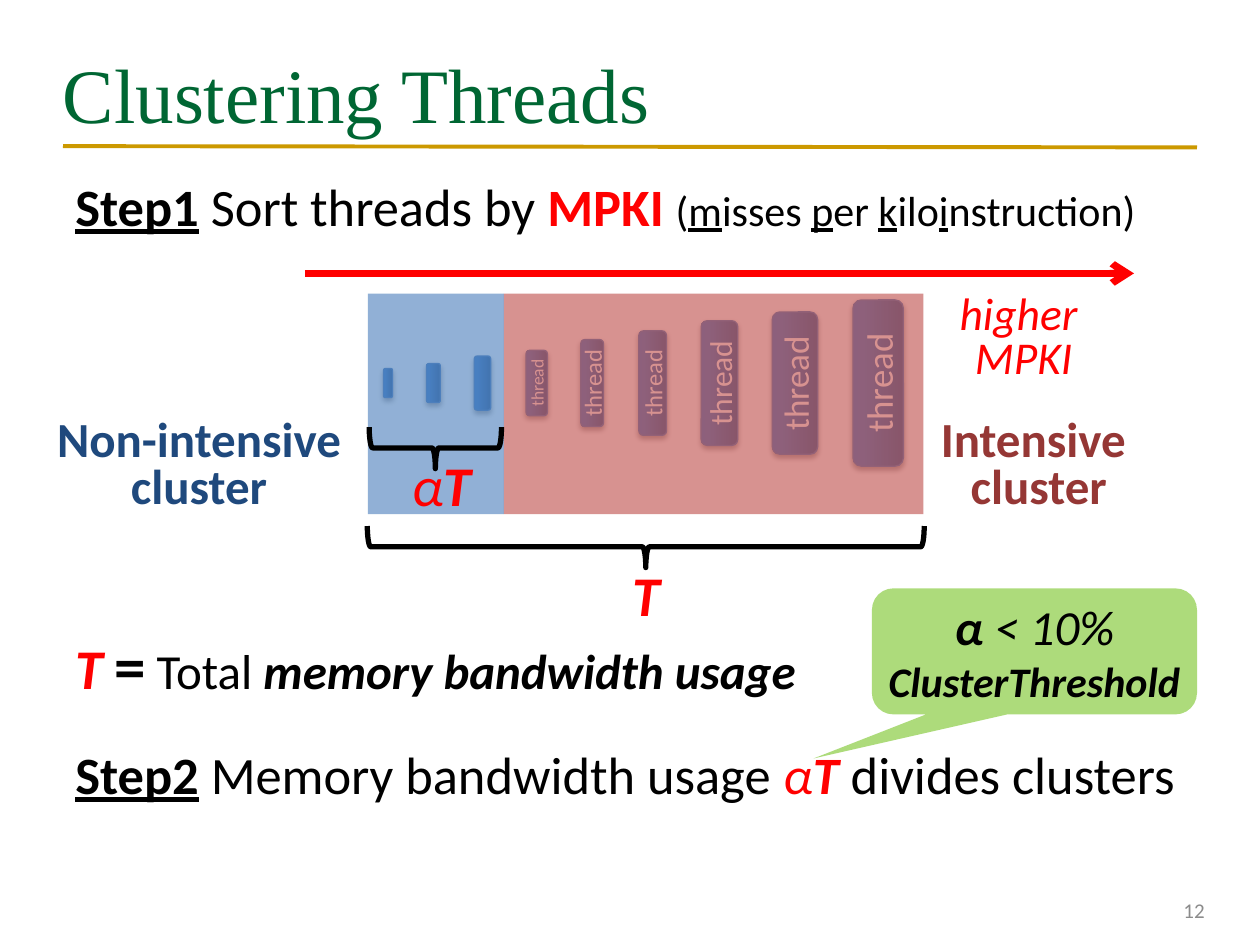
from dataclasses import dataclass

from lxml.etree import SubElement
from pptx import Presentation
from pptx.dml.color import RGBColor
from pptx.enum.shapes import MSO_CONNECTOR, MSO_SHAPE
from pptx.enum.text import MSO_ANCHOR, PP_ALIGN
from pptx.oxml.ns import qn
from pptx.util import Inches, Pt

COLORS = {
    "title": "006633", "rule": "CC9900", "black": "000000", "red": "FF0000",
    "white": "FFFFFF", "number": "8C8C8C", "callout": "92D050",
    "light_zone": "4F81BD", "heavy_zone": "C0504D",
    "light_label": "1F497D", "heavy_label": "953735", "bar_line": "4B7EBC",
}
BAR_GRADIENT = ((0, "2F5F99"), (80, "3D7CC7"), (100, "3A7CCB"))
BAR_MIDDLE = 3.04


@dataclass
class Span:
    text: str
    size: float
    color: str = "black"
    bold: bool = False
    italic: bool = False
    underline: bool = False
    font: str = "Calibri"


@dataclass
class Frame:
    left: float
    top: float
    width: float
    height: float

    def lengths(self) -> list:
        return [Inches(v) for v in (self.left, self.top, self.width, self.height)]


@dataclass
class ThreadBar:
    center: float
    length: float
    thickness: float
    text_size: int = 0


def rgb(name: str) -> RGBColor:
    return RGBColor.from_string(COLORS[name])


def write(shape, lines: list, align=PP_ALIGN.CENTER, anchor=MSO_ANCHOR.TOP,
          side: float = 0, edge: float = 0.05, spacing: float = 1, gap: float = 0) -> None:
    """Fill a shape with lines, each a list of spans."""
    text_frame = shape.text_frame
    text_frame.word_wrap = True
    text_frame.vertical_anchor = anchor
    text_frame.margin_left = text_frame.margin_right = Inches(side)
    text_frame.margin_top = text_frame.margin_bottom = Inches(edge)
    for index, line in enumerate(lines):
        para = text_frame.add_paragraph() if index else text_frame.paragraphs[0]
        para.alignment = align
        para.line_spacing = spacing
        if index and gap:
            para.space_before = Pt(gap)
        for span in line:
            run = para.add_run()
            run.text = span.text
            font = run.font
            font.name, font.size = span.font, Pt(span.size)
            font.bold, font.italic, font.underline = span.bold, span.italic, span.underline
            font.color.rgb = rgb(span.color)


def add_text(page, frame: Frame, lines: list, **options) -> None:
    write(page.shapes.add_textbox(*frame.lengths()), lines, **options)


def add_block(page, kind, frame: Frame, color: str, opacity: int):
    """Add a borderless, partly transparent shape."""
    block = page.shapes.add_shape(kind, *frame.lengths())
    block.shadow.inherit = False
    block.fill.solid()
    block.fill.fore_color.rgb = rgb(color)
    fill_color = block._element.spPr.find(qn("a:solidFill"))[0]
    SubElement(fill_color, qn("a:alpha"), val=str(opacity * 1000))
    block.line.fill.background()
    return block


def add_line(page, start: tuple, end: tuple, color: str, width: float, arrow: bool = False) -> None:
    line = page.shapes.add_connector(MSO_CONNECTOR.STRAIGHT, *map(Inches, start + end))
    line.line.color.rgb = rgb(color)
    line.line.width = Pt(width)
    if arrow:
        SubElement(line.line._get_or_add_ln(), qn("a:tailEnd"), type="arrow")
    SubElement(line._element.spPr, qn("a:effectLst"))


def add_brace(page, frame: Frame) -> None:
    brace = page.shapes.add_shape(MSO_SHAPE.RIGHT_BRACE, *frame.lengths())
    brace.rotation = 90
    brace.shadow.inherit = False
    brace.fill.background()
    brace.line.color.rgb = rgb("black")
    brace.line.width = Pt(3)


def add_bar(page, bar: ThreadBar) -> None:
    """Add an upright thread bar, a rounded rectangle turned on its end."""
    frame = Frame(bar.center - bar.length / 2, BAR_MIDDLE - bar.thickness / 2,
                  bar.length, bar.thickness)
    shape = page.shapes.add_shape(MSO_SHAPE.ROUNDED_RECTANGLE, *frame.lengths())
    shape.rotation = 270
    shape.line.color.rgb = rgb("bar_line")
    shape.line.width = Pt(0.75)
    # Three-stop gradient
    shape.fill.gradient()
    shape.fill.gradient_angle = 90
    properties = shape._element.spPr
    stops = properties.find(qn("a:gradFill")).find(qn("a:gsLst"))
    for stop in list(stops):
        stops.remove(stop)
    for position, color in BAR_GRADIENT:
        stop = SubElement(stops, qn("a:gs"), pos=str(position * 1000))
        SubElement(stop, qn("a:srgbClr"), val=color)
    # Soft shadow below
    shape.shadow.inherit = False
    shadow = SubElement(properties.find(qn("a:effectLst")), qn("a:outerShdw"),
                        blurRad=str(Pt(3.1)), dist=str(Pt(1.8)), dir="5400000", rotWithShape="0")
    shadow_color = SubElement(shadow, qn("a:srgbClr"), val=COLORS["black"])
    SubElement(shadow_color, qn("a:alpha"), val="35000")
    if bar.text_size:
        write(shape, [[Span("thread", bar.text_size, "white")]], anchor=MSO_ANCHOR.MIDDLE)


def main() -> None:
    deck = Presentation()
    deck.slide_width, deck.slide_height = Inches(10), Inches(7.5)
    page = deck.slides.add_slide(deck.slide_layouts[6])
    left, middle = PP_ALIGN.LEFT, MSO_ANCHOR.MIDDLE

    # Title, rule and page number
    add_line(page, (0.5, 1.16), (9.5, 1.17), "rule", 2.25)
    add_text(page, Frame(0.5, 0.3, 9, 0.87),
             [[Span("Clustering Threads", 44, "title", font="Times New Roman")]],
             align=left, anchor=middle)
    add_text(page, Frame(7.33, 7.02, 2.33, 0.4), [[Span("12", 12, "number")]],
             align=PP_ALIGN.RIGHT, anchor=middle, side=0.1)

    # Step 1, with the initials of MPKI underlined
    step_one = [Span("Step1", 30, bold=True, underline=True), Span(" Sort threads by ", 30),
                Span("MPKI ", 30, "red", bold=True), Span("(", 24)]
    for initial, rest in (("m", "isses "), ("p", "er "), ("k", "ilo"), ("i", "nstruction)")):
        step_one += [Span(initial, 24, underline=True), Span(rest, 24)]
    add_text(page, Frame(0.5, 1.33, 9, 0.67), [step_one], align=left, side=0.1)

    # Threads sorted by intensity
    for bar in (
        ThreadBar(3.08, 0.23, 0.07), ThreadBar(3.44, 0.31, 0.11), ThreadBar(3.83, 0.43, 0.13),
        ThreadBar(4.26, 0.52, 0.17, 10), ThreadBar(4.7, 0.69, 0.18, 14),
        ThreadBar(5.18, 0.83, 0.22, 14), ThreadBar(5.71, 0.99, 0.29, 18),
        ThreadBar(6.31, 1.13, 0.36, 20), ThreadBar(6.97, 1.32, 0.4, 21),
    ):
        add_bar(page, bar)
    add_line(page, (2.42, 2.17), (9, 2.17), "red", 4, arrow=True)
    add_text(page, Frame(7.5, 2.29, 1.25, 0.81),
             [[Span(word, 26, "red", italic=True)] for word in ("higher ", "MPKI")],
             anchor=middle, spacing=0.8)

    # Cluster zones over the threads, with their names
    add_block(page, MSO_SHAPE.RECTANGLE, Frame(2.92, 2.33, 1.08, 1.75), "light_zone", 62)
    add_block(page, MSO_SHAPE.RECTANGLE, Frame(4, 2.33, 3.33, 1.75), "heavy_zone", 62)
    for name, x, width, color in (("Non-intensive", 0.33, 2.5, "light_label"),
                                  ("Intensive ", 7.33, 1.83, "heavy_label")):
        add_text(page, Frame(x, 3.33, width, 0.77),
                 [[Span(word, 28, color, bold=True)] for word in (name, "cluster")],
                 edge=0, spacing=0.8)

    # Braces and bandwidth symbols
    alpha = Span("α", 32, "red", italic=True)
    total = Span("T", 32, "red", bold=True, italic=True)
    add_brace(page, Frame(4.96, 2.13, 0.33, 4.42))
    add_text(page, Frame(4.88, 4.5, 0.5, 0.55), [[total]], spacing=0.8)
    add_brace(page, Frame(3.29, 3.03, 0.33, 1.05))
    add_text(page, Frame(3.17, 3.63, 0.67, 0.55), [[alpha, total]], spacing=0.8)

    # Threshold callout
    callout = add_block(page, MSO_SHAPE.ROUNDED_RECTANGULAR_CALLOUT,
                        Frame(6.92, 4.67, 2.58, 1), "callout", 75)
    for index, value in enumerate((-0.68, 0.85, 0.17)):
        callout.adjustments[index] = value
    write(callout, [[Span("α", 28, bold=True, italic=True), Span(" < 10% ", 28, italic=True),
                     Span("ClusterThreshold", 24, bold=True, italic=True)]], anchor=middle)

    # Meaning of T, then step 2
    meaning = [total, Span(" ", 28, italic=True), Span("=", 36, bold=True),
               Span(" ", 28, italic=True), Span("Total ", 28),
               Span("memory bandwidth usage", 28, bold=True, italic=True)]
    step_two = [Span("Step2", 30, bold=True, underline=True), Span(" Memory bandwidth usage ", 30),
                Span("α", 30, "red", italic=True), Span("T ", 30, "red", bold=True, italic=True),
                Span("divides clusters", 30)]
    add_text(page, Frame(0.5, 4.92, 9, 1.83), [meaning, step_two], align=left, side=0.1, gap=23)

    deck.save("out.pptx")


if __name__ == "__main__":
    main()
